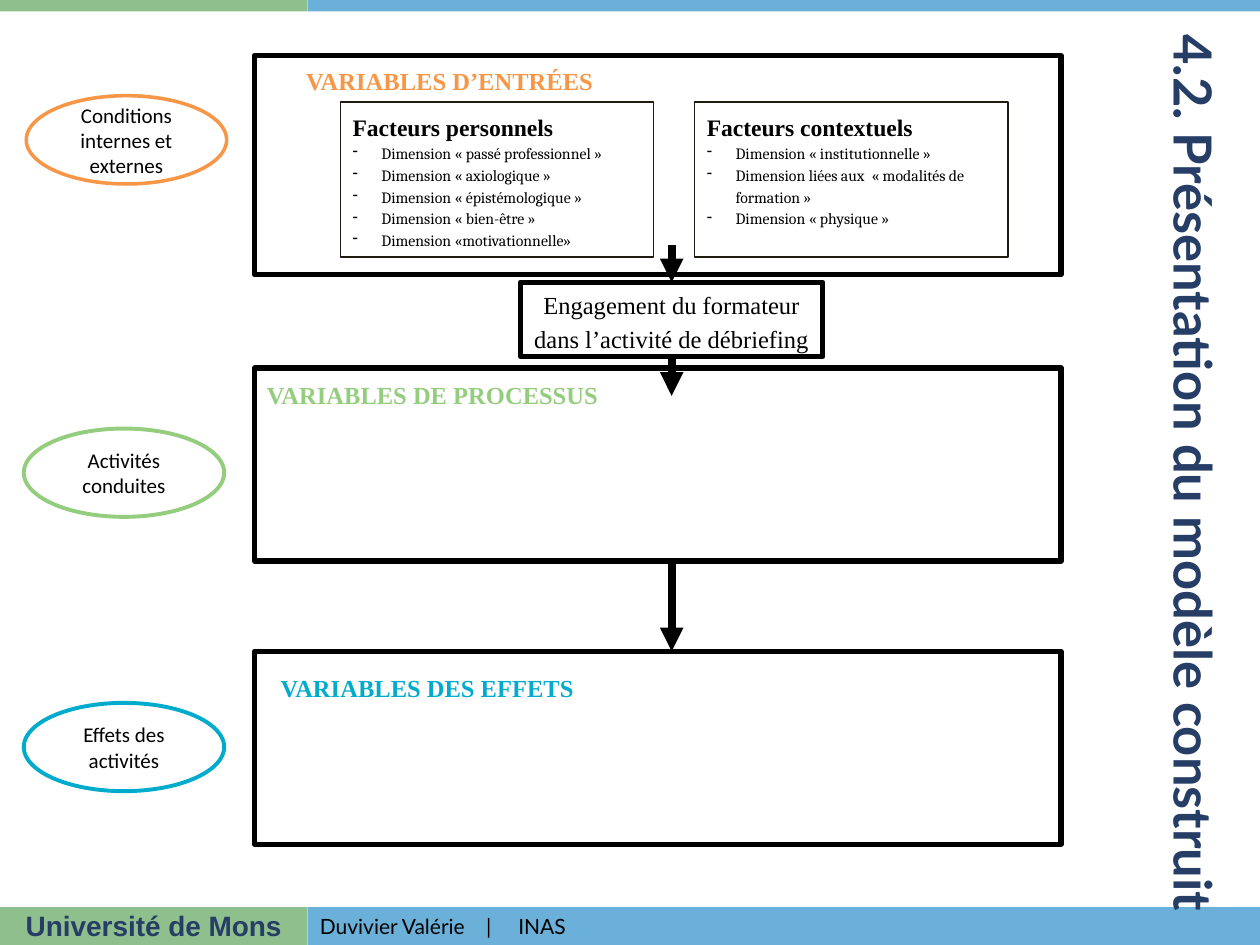
import pptx
import pptx.dml.color
import pptx.enum.shapes
import pptx.enum.text
import pptx.oxml.ns
import pptx.util
from lxml import etree

Cm = pptx.util.Cm
Pt = pptx.util.Pt
RGBColor = pptx.dml.color.RGBColor
Shape = pptx.enum.shapes.MSO_SHAPE
Anchor = pptx.enum.text.MSO_ANCHOR
Align = pptx.enum.text.PP_ALIGN
qn = pptx.oxml.ns.qn

GREEN_BAR = RGBColor(0x8E, 0xBF, 0x8C)
BLUE_BAR = RGBColor(0x6A, 0xB0, 0xD8)
NAVY = RGBColor(0x26, 0x3E, 0x65)
BLACK = RGBColor(0, 0, 0)
PANEL_LINE = RGBColor(0x1E, 0x1C, 0x11)
ORANGE = RGBColor(0xF7, 0x96, 0x46)
GREEN = RGBColor(0x94, 0xCD, 0x7E)
CYAN = RGBColor(0x00, 0xAB, 0xCC)

SLIDE_WIDTH, SLIDE_HEIGHT = 25.4, 19.05
BAR_SPLIT = 6.2
FOOTER_TOP, FOOTER_HEIGHT = 18.29, 0.76
FRAME_LEFT, FRAME_WIDTH = 5.13, 16.26
FLOW_X = 13.54

SERIF_BOLD = {"name": "Times New Roman", "size": Pt(14), "bold": True}
CENTERED = {"alignment": Align.CENTER}
SPACED = {"line_spacing": 1.15}


def set_attributes(target, values):
    for name, value in values.items():
        setattr(target, name, value)


def write_paragraph(paragraph, text, font, color, layout=None):
    run = paragraph.add_run()
    run.text = text
    set_attributes(run.font, font)
    run.font.color.rgb = color
    set_attributes(paragraph, layout or {})


def add_box(slide, kind, box, fill=None, line=None, width=0):
    shape = slide.shapes.add_shape(kind, *map(Cm, box))
    shape.shadow.inherit = False
    if fill is None:
        shape.fill.background()
    else:
        shape.fill.solid()
        shape.fill.fore_color.rgb = fill
    if line is None:
        shape.line.fill.background()
    else:
        shape.line.color.rgb = line
        shape.line.width = Pt(width)
    return shape


def add_text(slide, box, text, font, color, layout=None, anchor=Anchor.TOP):
    frame = slide.shapes.add_textbox(*map(Cm, box)).text_frame
    set_attributes(frame, {"word_wrap": True, "vertical_anchor": anchor})
    write_paragraph(frame.paragraphs[0], text, font, color, layout)
    return frame


def add_bars(slide):
    for top, height in ((0, 0.23), (FOOTER_TOP, FOOTER_HEIGHT)):
        add_box(slide, Shape.RECTANGLE, (0, top, BAR_SPLIT, height), GREEN_BAR)
        add_box(slide, Shape.RECTANGLE,
                (BAR_SPLIT, top, SLIDE_WIDTH - BAR_SPLIT, height), BLUE_BAR)


def add_footer(slide):
    add_text(slide, (0, 18.19, BAR_SPLIT, 0.94), "Université de Mons",
             {"name": "Arial", "size": Pt(16), "bold": True}, NAVY, CENTERED)
    frame = add_text(slide, (BAR_SPLIT, FOOTER_TOP, 17.78, FOOTER_HEIGHT),
                     "Duvivier Valérie\t|\tINAS",
                     {"name": "Lato", "size": Pt(12)}, BLACK, anchor=Anchor.MIDDLE)
    properties = frame.paragraphs[0]._p.get_or_add_pPr()
    tabs = etree.SubElement(properties, qn("a:tabLst"))
    for position in (3.35, 4.0):
        etree.SubElement(tabs, qn("a:tab"), pos=str(Cm(position)), algn="l")


def add_panel(slide, left, heading, items):
    panel = add_box(slide, Shape.RECTANGLE, (left, 2.06, 6.32, 3.12),
                    line=PANEL_LINE, width=0.75)
    frame = panel.text_frame
    set_attributes(frame, {"word_wrap": True, "vertical_anchor": Anchor.TOP})
    layout = {**SPACED, "alignment": Align.LEFT}
    write_paragraph(frame.paragraphs[0], heading,
                    {**SERIF_BOLD, "size": Pt(13.5)}, BLACK, layout)
    for item in items:
        paragraph = frame.add_paragraph()
        write_paragraph(paragraph, item, {"name": "Cambria", "size": Pt(9)},
                        BLACK, layout)
        properties = paragraph._p.get_or_add_pPr()
        properties.set("marL", str(Cm(0.58)))
        properties.set("indent", str(-Cm(0.58)))
        etree.SubElement(properties, qn("a:buChar"), char="-")


def add_centered_box(slide, kind, box, text, font, line, width, layout=CENTERED):
    shape = add_box(slide, kind, box, line=line, width=width)
    set_attributes(shape.text_frame,
                   {"word_wrap": True, "vertical_anchor": Anchor.MIDDLE})
    write_paragraph(shape.text_frame.paragraphs[0], text, font, BLACK, layout)
    return shape


def add_arrow(slide, top, bottom):
    arrow = slide.shapes.add_connector(
        pptx.enum.shapes.MSO_CONNECTOR.STRAIGHT,
        Cm(FLOW_X), Cm(top), Cm(FLOW_X), Cm(bottom))
    arrow.line.color.rgb = BLACK
    arrow.line.width = Pt(4.5)
    etree.SubElement(arrow.line._get_or_add_ln(), qn("a:tailEnd"), type="triangle")
    etree.SubElement(arrow._element.spPr, qn("a:effectLst"))
    return arrow


def place_title(slide, text):
    title = slide.shapes.title
    set_attributes(title, {"left": Cm(12.65), "top": Cm(7.75), "width": Cm(22.86),
                           "height": Cm(3.56), "rotation": 90})
    set_attributes(title.text_frame,
                   {"word_wrap": True, "vertical_anchor": Anchor.MIDDLE,
                    "auto_size": pptx.enum.text.MSO_AUTO_SIZE.NONE})
    write_paragraph(title.text_frame.paragraphs[0], text,
                    {"name": "Lato", "size": Pt(30), "bold": True}, NAVY, CENTERED)
    slide.shapes._spTree.append(title._element)


def main():
    presentation = pptx.Presentation()
    presentation.slide_width = Cm(SLIDE_WIDTH)
    presentation.slide_height = Cm(SLIDE_HEIGHT)
    slide = presentation.slides.add_slide(presentation.slide_layouts[5])

    add_bars(slide)
    add_footer(slide)

    for top, height in ((1.12, 4.42), (7.42, 3.89), (13.13, 3.89)):
        add_box(slide, Shape.RECTANGLE, (FRAME_LEFT, top, FRAME_WIDTH, height),
                line=BLACK, width=3)

    headings = (
        ((4.52, 1.12, 9.09, 0.89), "VARIABLES D’ENTRÉES", ORANGE, {**CENTERED, **SPACED}),
        ((5.13, 7.54, 7.57, 1.27), "VARIABLES DE PROCESSUS", GREEN, None),
        ((5.41, 13.44, 6.6, 0.91), "VARIABLES DES EFFETS", CYAN, None),
    )
    for box, text, color, layout in headings:
        add_text(slide, box, text, SERIF_BOLD, color, layout)

    add_panel(slide, 6.86, "Facteurs personnels", (
        "Dimension « passé professionnel »",
        "Dimension « axiologique »",
        "Dimension « épistémologique »",
        "Dimension « bien-être »",
        "Dimension «motivationnelle»",
    ))
    add_panel(slide, 14, "Facteurs contextuels", (
        "Dimension « institutionnelle »",
        "Dimension liées aux  « modalités de formation »",
        "Dimension « physique »",
    ))

    engagement = add_centered_box(
        slide, Shape.RECTANGLE, (10.49, 5.69, 6.1, 1.5),
        "Engagement du formateur dans l’activité de débriefing",
        {"name": "Times New Roman", "size": Pt(14)}, BLACK, 3, {**CENTERED, **SPACED})
    add_arrow(slide, 4.93, 5.69).end_connect(engagement, 0)
    add_arrow(slide, 7.19, 7.98).begin_connect(engagement, 2)
    add_arrow(slide, 11.31, 13.13)

    ovals = (
        (0.53, 1.93, "Conditions internes et externes", ORANGE, 2),
        (0.48, 8.64, "Activités conduites", GREEN, 2.25),
        (0.48, 14.17, "Effets des activités", CYAN, 2.25),
    )
    for left, top, text, color, width in ovals:
        add_centered_box(slide, Shape.OVAL, (left, top, 4.04, 1.78), text,
                         {"name": "Calibri", "size": Pt(12)}, color, width)

    place_title(slide, "4.2. Présentation du modèle construit")
    presentation.save("out.pptx")


if __name__ == "__main__":
    main()
